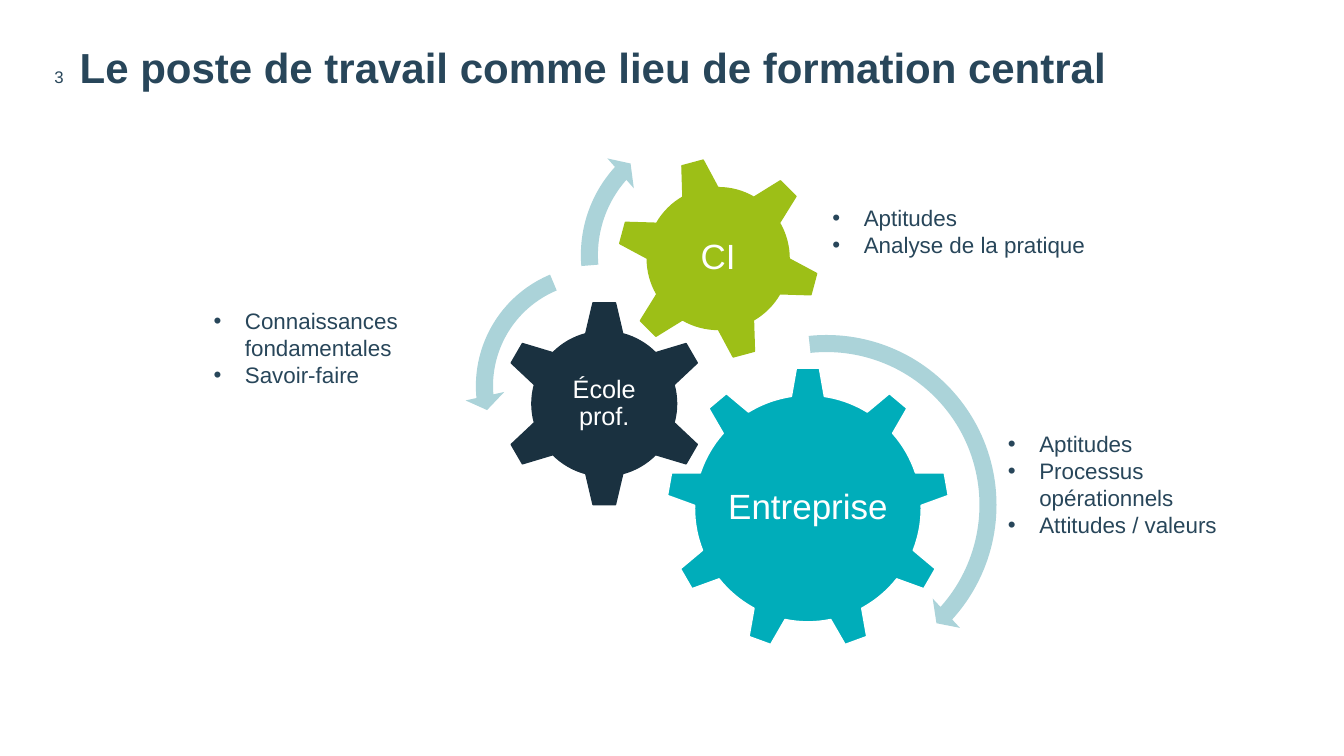
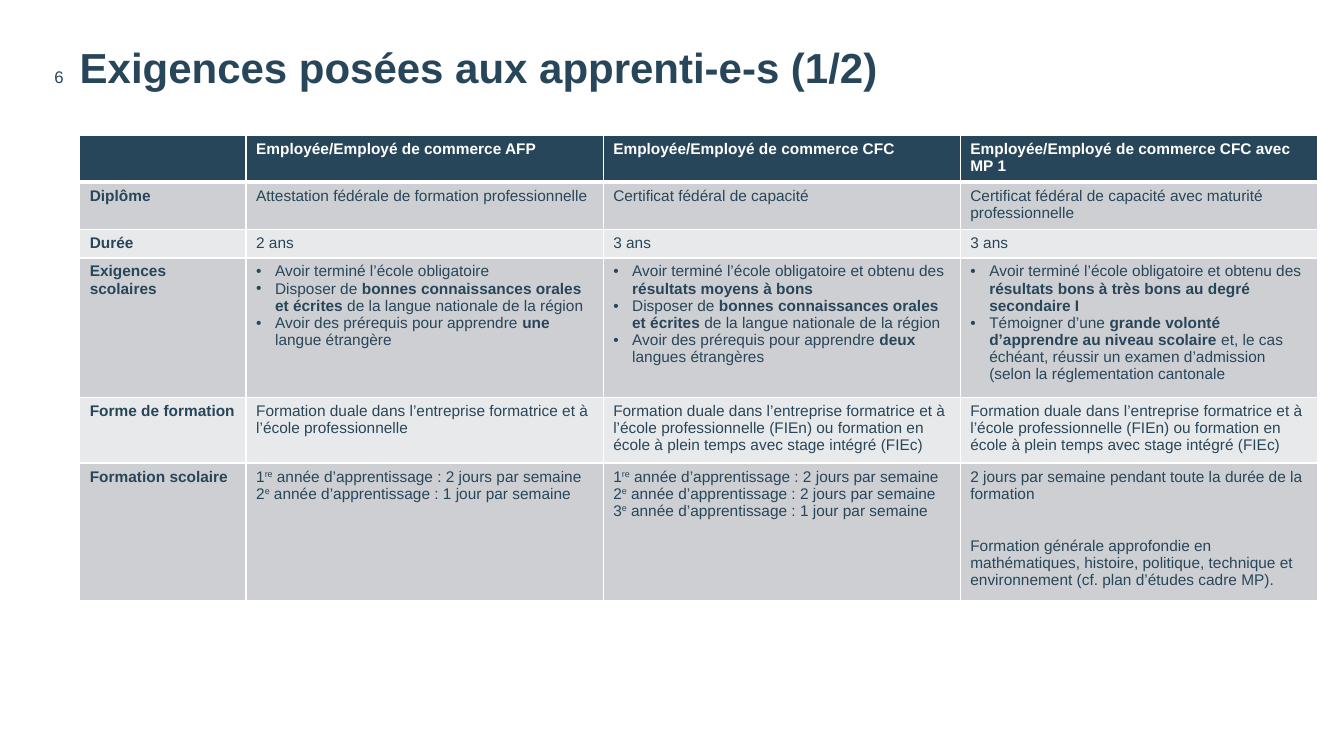
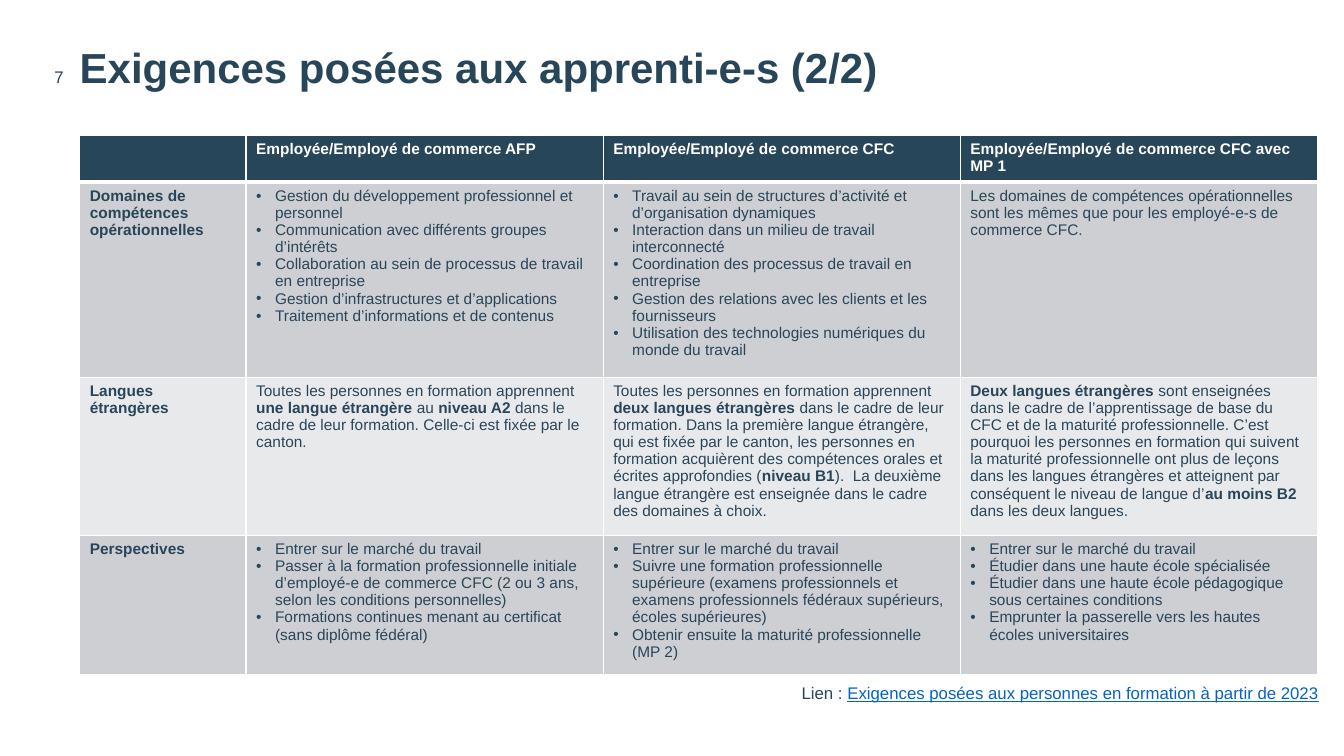
from dataclasses import dataclass

from lxml.etree import SubElement as Sub
from pptx import Presentation
from pptx.dml.color import RGBColor as Rgb
from pptx.enum.shapes import MSO_SHAPE as Kind
from pptx.enum.text import MSO_ANCHOR as Anchor, PP_ALIGN as Align
from pptx.oxml.ns import qn
from pptx.util import Inches, Pt


@dataclass(frozen=True)
class Theme:
    font: str = "Arial"
    navy: str = "28465A"
    night: str = "1A3140"
    teal: str = "00ADBA"
    lime: str = "9DBF17"
    pale: str = "ABD3D9"
    dark: str = "CDCFD2"
    light: str = "E8E9EA"
    white: str = "FFFFFF"
    link: str = "0563C1"
    title: int = 30
    large: int = 25
    label: int = 18
    body: int = 16
    small: int = 12
    cell: int = 11


T = Theme()
WIDTH, HEIGHT = Inches(13.33), Inches(7.5)
LEFT = 5.93
HEADS = [
    "",
    "Employée/Employé de commerce AFP",
    "Employée/Employé de commerce CFC",
    "Employée/Employé de commerce CFC avec MP 1",
]
DUAL = "Formation duale dans l’entreprise formatrice et à l’école professionnelle"
BOTH = DUAL + " (FIEn) ou formation en école à plein temps avec stage intégré (FIEc)"
SPOKEN = "Disposer de *bonnes connaissances orales et écrites* de la langue nationale de la région"
MARKET = "Entrer sur le marché du travail"


def wide(share):
    return round(WIDTH * share / 100)


def high(share):
    return round(HEIGHT * share / 100)


def term(rank, days):
    return f"{rank} année d’apprentissage : {days} par semaine"


def parts(text):
    for i, chunk in enumerate(text.split("*")):
        for j, piece in enumerate(chunk.split("^")):
            for k, bit in enumerate(piece.split("_")):
                if bit:
                    yield bit, i % 2, j % 2, k % 2


def bullet(para, dent):
    props = para._p.get_or_add_pPr()
    props.set("marL", str(wide(dent)))
    props.set("indent", str(-wide(dent)))
    Sub(props, qn("a:buFont"), typeface=T.font)
    Sub(props, qn("a:buChar"), char="•")


def write(frame, text, size=T.cell, color=T.navy, bold=False,
          align=Align.LEFT, lead=None, dent=1.41):
    lines = [text] if isinstance(text, str) else text
    for n, line in enumerate(lines):
        para = frame.add_paragraph() if n else frame.paragraphs[0]
        if isinstance(text, list):
            bullet(para, dent)
        para.alignment = align
        if lead:
            para.line_spacing = lead
        if line.startswith(">"):
            para.space_before = Pt(25)
        for bit, strong, raised, linked in parts(line.lstrip(">")):
            run = para.add_run()
            run.text = bit
            font = run.font
            font.name, font.size = T.font, Pt(size)
            font.bold = bool(bold or strong)
            font.color.rgb = Rgb.from_string(T.link if linked else color)
            if linked:
                font.underline = True
            if raised:
                run._r.get_or_add_rPr().set("baseline", "30000")


def box(slide, place, text, inset=None, anchor=Anchor.TOP, **style):
    x, y, w, h = place
    frame = slide.shapes.add_textbox(wide(x), high(y), wide(w), high(h)).text_frame
    frame.word_wrap = True
    frame.vertical_anchor = anchor
    if inset is not None:
        frame.margin_left = frame.margin_right = Inches(inset)
        frame.margin_top = frame.margin_bottom = Inches(inset)
    write(frame, text, **style)


def round_shape(slide, kind, place, fill, edge=None):
    x, y, size = place
    side = wide(size)
    shape = slide.shapes.add_shape(
        kind, wide(x) - side // 2, high(y) - side // 2, side, side)
    shape.shadow.inherit = False
    shape.fill.solid()
    shape.fill.fore_color.rgb = Rgb.from_string(fill)
    if edge:
        shape.line.color.rgb = Rgb.from_string(edge)
        shape.line.width = Pt(1)
    else:
        shape.line.fill.background()
    return shape


def gear(slide, kind, place, fill, edge, text, size, share, turn=0):
    round_shape(slide, kind, place, fill, edge).rotation = turn
    x, y, span = place
    w = span * share
    h = w * WIDTH / HEIGHT
    box(slide, (x - w / 2, y - h / 2, w, h), text, inset=0.03,
        anchor=Anchor.MIDDLE, size=size, color=T.white,
        align=Align.CENTER, lead=0.9)


def arrow(slide, kind, place, band, tip, end, start, head):
    shape = round_shape(slide, kind, place, T.pale)
    values = band / 100, tip * 0.6, end * 0.6, start * 0.6, head / 100
    for n, value in enumerate(values):
        shape.adjustments[n] = value


def border(cell, **sides):
    props = cell._tc.get_or_add_tcPr()
    for side in "LRTB":
        line = Sub(props, qn("a:ln" + side), w=str(Pt(sides.get(side, 1))))
        Sub(Sub(line, qn("a:solidFill")), qn("a:srgbClr"), val=T.white)


def grid(slide, rows, lines):
    cols = [12.38] + [26.57] * 3
    tall = [Inches(0.1 + 0.17 * n) for n in lines]
    table = slide.shapes.add_table(
        len(lines), len(cols), wide(LEFT), high(17.87),
        wide(sum(cols)), sum(tall)).table
    table.first_row = table.horz_banding = False
    for col, share in zip(table.columns, cols):
        col.width = wide(share)
    for r, texts in enumerate([HEADS] + rows):
        table.rows[r].height = tall[r]
        fill = (T.dark if r % 2 else T.light) if r else T.navy
        for c, text in enumerate(texts):
            cell = table.cell(r, c)
            border(cell, B=1 if r else 3, T=3 if r == 1 else 1)
            cell.fill.solid()
            cell.fill.fore_color.rgb = Rgb.from_string(fill)
            write(cell.text_frame, text, bold=not r or not c,
                  color=T.navy if r else T.white)


def page(deck, number, title):
    slide = deck.slides.add_slide(deck.slide_layouts[6])
    box(slide, (LEFT, 6.27, 91.13, 8.4), title, inset=0,
        size=T.title, bold=True, lead=Pt(32))
    box(slide, (0, 8.67, 4.73, 2.8), number, inset=0, anchor=Anchor.BOTTOM,
        size=T.small, align=Align.RIGHT, lead=Pt(18))
    return slide


def places(deck):
    slide = page(deck, "3", "Le poste de travail comme lieu de formation central")
    gear(slide, Kind.GEAR_9, (60.11, 67.27, 21.08), T.teal, T.white,
         "Entreprise", T.large, 0.6)
    gear(slide, Kind.GEAR_6, (44.96, 53.4, 15.38), T.night, T.night,
         "École prof.", T.label, 0.5)
    gear(slide, Kind.GEAR_6, (53.44, 34.2, 15.08), T.lime, T.lime,
         "CI", T.large, 0.56, turn=345)
    arrow(slide, Kind.CIRCULAR_ARROW, (61.5, 66.8, 27),
          4.7, 4.98, 42.11, 263.98, 5.5)
    arrow(slide, Kind.LEFT_CIRCULAR_ARROW, (44.4, 51.07, 19.65),
          6.5, 7.17, 174.82, 247.3, 7.5)
    arrow(slide, Kind.CIRCULAR_ARROW, (52.95, 33.73, 21.15),
          6, 6.57, 221.9, 175.14, 7)
    notes = [
        (61.2, 26.4, 8.53, ["Aptitudes", "Analyse de la pratique"]),
        (74.25, 56.27, 15.73,
         ["Aptitudes", "Processus opérationnels", "Attitudes / valeurs"]),
        (15.15, 40, 12.13, ["Connaissances fondamentales", "Savoir-faire"]),
    ]
    for x, y, h, text in notes:
        box(slide, (x, y, 21.3, h), text, size=T.body, dent=2.34)


def needs(deck):
    slide = page(deck, "6", "Exigences posées aux apprenti-e-s (1/2)")
    grid(slide, [
        ["Diplôme",
         "Attestation fédérale de formation professionnelle",
         "Certificat fédéral de capacité",
         "Certificat fédéral de capacité avec maturité professionnelle"],
        ["Durée", "2 ans", "3 ans", "3 ans"],
        ["Exigences scolaires",
         ["Avoir terminé l’école obligatoire",
          SPOKEN,
          "Avoir des prérequis pour apprendre *une* langue étrangère"],
         ["Avoir terminé l’école obligatoire et obtenu des *résultats moyens à bons*",
          SPOKEN,
          "Avoir des prérequis pour apprendre *deux* langues étrangères"],
         ["Avoir terminé l’école obligatoire et obtenu des "
          "*résultats bons à très bons au degré secondaire I*",
          "Témoigner d’une *grande volonté d’apprendre au niveau scolaire* et, le cas "
          "échéant, réussir un examen d’admission (selon la réglementation cantonale"]],
        ["Forme de formation", DUAL, BOTH, BOTH],
        ["Formation scolaire",
         (term("1^re^", "2 jours"), term("2^e^", "1 jour")),
         (term("1^re^", "2 jours"), term("2^e^", "2 jours"), term("3^e^", "1 jour")),
         ("2 jours par semaine pendant toute la durée de la formation",
          ">Formation générale approfondie en mathématiques, histoire, politique, "
          "technique et environnement (cf. plan d’études cadre MP).")],
    ], [2, 2, 1, 7, 3, 7])


def skills(deck):
    slide = page(deck, "7", "Exigences posées aux apprenti-e-s (2/2)")
    grid(slide, [
        ["Domaines de compétences opérationnelles",
         ["Gestion du développement professionnel et personnel",
          "Communication avec différents groupes d’intérêts",
          "Collaboration au sein de processus de travail en entreprise",
          "Gestion d’infrastructures et d’applications",
          "Traitement d’informations et de contenus"],
         ["Travail au sein de structures d’activité et d’organisation dynamiques",
          "Interaction dans un milieu de travail interconnecté",
          "Coordination des processus de travail en entreprise",
          "Gestion des relations avec les clients et les fournisseurs",
          "Utilisation des technologies numériques du monde du travail"],
         "Les domaines de compétences opérationnelles sont les mêmes que pour "
         "les employé-e-s de commerce CFC."],
        ["Langues étrangères",
         "Toutes les personnes en formation apprennent *une langue étrangère* au "
         "*niveau A2* dans le cadre de leur formation. Celle-ci est fixée par le canton.",
         "Toutes les personnes en formation apprennent *deux langues étrangères* dans "
         "le cadre de leur formation. Dans la première langue étrangère, qui est fixée "
         "par le canton, les personnes en formation acquièrent des compétences orales "
         "et écrites approfondies (*niveau B1*).  La deuxième langue étrangère est "
         "enseignée dans le cadre des domaines à choix.",
         "*Deux langues étrangères* sont enseignées dans le cadre de l’apprentissage "
         "de base du CFC et de la maturité professionnelle. C’est pourquoi les "
         "personnes en formation qui suivent la maturité professionnelle ont plus de "
         "leçons dans les langues étrangères et atteignent par conséquent le niveau "
         "de langue d’*au moins B2* dans les deux langues."],
        ["Perspectives",
         [MARKET,
          "Passer à la formation professionnelle initiale d’employé-e de commerce CFC "
          "(2 ou 3 ans, selon les conditions personnelles)",
          "Formations continues menant au certificat (sans diplôme fédéral)"],
         [MARKET,
          "Suivre une formation professionnelle supérieure (examens professionnels et "
          "examens professionnels fédéraux supérieurs, écoles supérieures)",
          "Obtenir ensuite la maturité professionnelle (MP 2)"],
         [MARKET,
          "Étudier dans une haute école spécialisée",
          "Étudier dans une haute école pédagogique sous certaines conditions",
          "Emprunter la passerelle vers les hautes écoles universitaires"]],
    ], [2, 10, 8, 7])
    box(slide, (35.4, 89.6, 63.83, 4),
        "Lien : _Exigences posées aux personnes en formation à partir de 2023_ ",
        size=T.small, align=Align.RIGHT)


def main():
    deck = Presentation()
    deck.slide_width, deck.slide_height = WIDTH, HEIGHT
    places(deck)
    needs(deck)
    skills(deck)
    deck.save("out.pptx")


if __name__ == "__main__":
    main()
